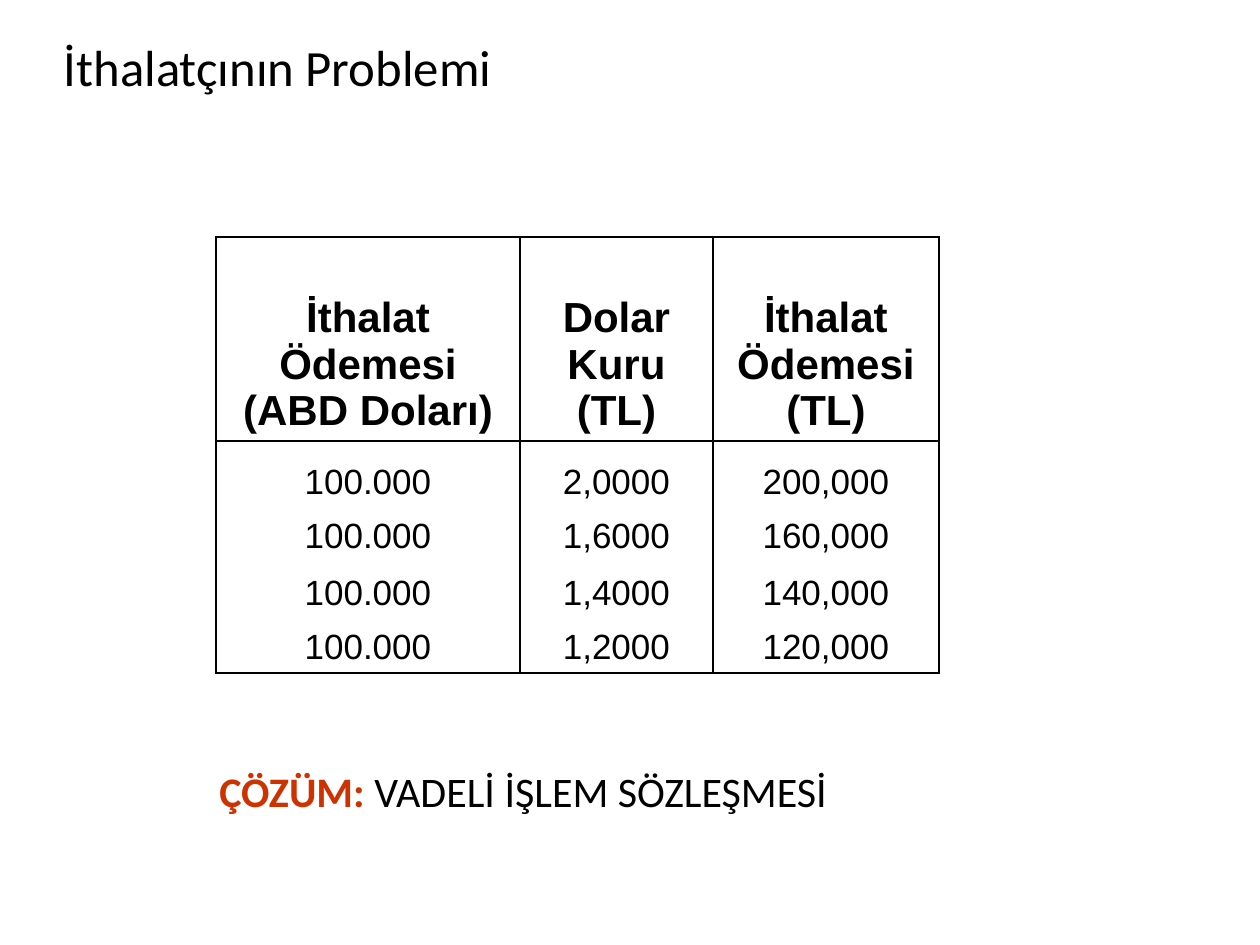
from lxml import etree
from pptx import Presentation
from pptx.dml.color import RGBColor
from pptx.enum.text import MSO_ANCHOR, MSO_AUTO_SIZE, PP_ALIGN
from pptx.oxml.ns import qn
from pptx.util import Pt

PX = 914400 // 126
CENTER = PP_ALIGN.CENTER
LEFT = PP_ALIGN.LEFT
TOP = MSO_ANCHOR.TOP
BOTTOM = MSO_ANCHOR.BOTTOM
BLACK = "000000"
ACCENT = "CC3300"
TITLE_ONLY = 5

COLUMN_WIDTHS = [304, 193, 226]
ROW_HEIGHTS = [204, 67, 54, 57, 54]
HEADERS = ["İthalat Ödemesi\n(ABD Doları)", "Dolar Kuru (TL)", "İthalat Ödemesi\n(TL)"]
PAYMENTS = [
    ("100.000", "2,0000", "200,000"),
    ("100.000", "1,6000", "160,000"),
    ("100.000", "1,4000", "140,000"),
    ("100.000", "1,2000", "120,000"),
]


def color(value):
    return RGBColor.from_string(value)


def scale(box):
    return [length * PX for length in box]


def style_font(font, name, size, value, bold=False):
    font.name = name
    font.size = Pt(size)
    font.bold = bold
    font.color.rgb = color(value)


def set_borders(cell, visible_sides):
    properties = cell._tc.get_or_add_tcPr()
    for side in "LRTB":
        line = etree.SubElement(properties, qn(f"a:ln{side}"), w=str(Pt(1)))
        if side in visible_sides:
            fill = etree.SubElement(line, qn("a:solidFill"))
            etree.SubElement(fill, qn("a:srgbClr"), val=BLACK)
        else:
            etree.SubElement(line, qn("a:noFill"))


def add_title(slide, box):
    title = slide.shapes.title
    title.left, title.top, title.width, title.height = scale(box)
    frame = title.text_frame
    frame.text = "İthalatçının Problemi"
    frame.vertical_anchor = TOP
    frame.auto_size = MSO_AUTO_SIZE.NONE
    paragraph = frame.paragraphs[0]
    paragraph.alignment = CENTER
    style_font(paragraph.font, "Calibri", 29, BLACK)


def fill_cell(cell, text, is_header, visible_sides):
    cell.text = text
    cell.vertical_anchor = BOTTOM
    set_borders(cell, visible_sides)
    cell.fill.background()
    for paragraph in cell.text_frame.paragraphs:
        paragraph.alignment = CENTER
        style_font(paragraph.font, "Arial", 24 if is_header else 20, BLACK, is_header)


def add_payment_table(slide, left, top):
    rows = [HEADERS, *PAYMENTS]
    box = scale((left, top, sum(COLUMN_WIDTHS), sum(ROW_HEIGHTS)))
    table = slide.shapes.add_table(len(rows), len(HEADERS), *box).table
    table.horz_banding = False
    for column, width in zip(table.columns, COLUMN_WIDTHS):
        column.width = width * PX
    for row, height in zip(table.rows, ROW_HEIGHTS):
        row.height = height * PX
    for row_index, texts in enumerate(rows):
        visible_sides = "LR"
        if row_index <= 1:
            visible_sides += "T"
        if row_index in (0, len(rows) - 1):
            visible_sides += "B"
        for column_index, text in enumerate(texts):
            cell = table.cell(row_index, column_index)
            fill_cell(cell, text, row_index == 0, visible_sides)


def add_solution(slide, box):
    frame = slide.shapes.add_textbox(*scale(box)).text_frame
    frame.word_wrap = False
    frame.auto_size = MSO_AUTO_SIZE.SHAPE_TO_FIT_TEXT
    paragraph = frame.paragraphs[0]
    paragraph.alignment = LEFT
    for text, value, bold in (
        ("ÇÖZÜM:", ACCENT, True),
        (" VADELİ İŞLEM SÖZLEŞMESİ", BLACK, False),
    ):
        run = paragraph.add_run()
        run.text = text
        style_font(run.font, "Calibri", 24, value, bold)


def main():
    presentation = Presentation()
    presentation.slide_width, presentation.slide_height = scale((1260, 945))
    slide = presentation.slides.add_slide(presentation.slide_layouts[TITLE_ONLY])
    slide.background.fill.solid()
    slide.background.fill.fore_color.rgb = color("FFFFFF")
    add_title(slide, (-178, 29, 912, 108))
    add_payment_table(slide, 216, 237)
    add_solution(slide, (207, 759, 771, 63))
    presentation.save("out.pptx")


if __name__ == "__main__":
    main()
